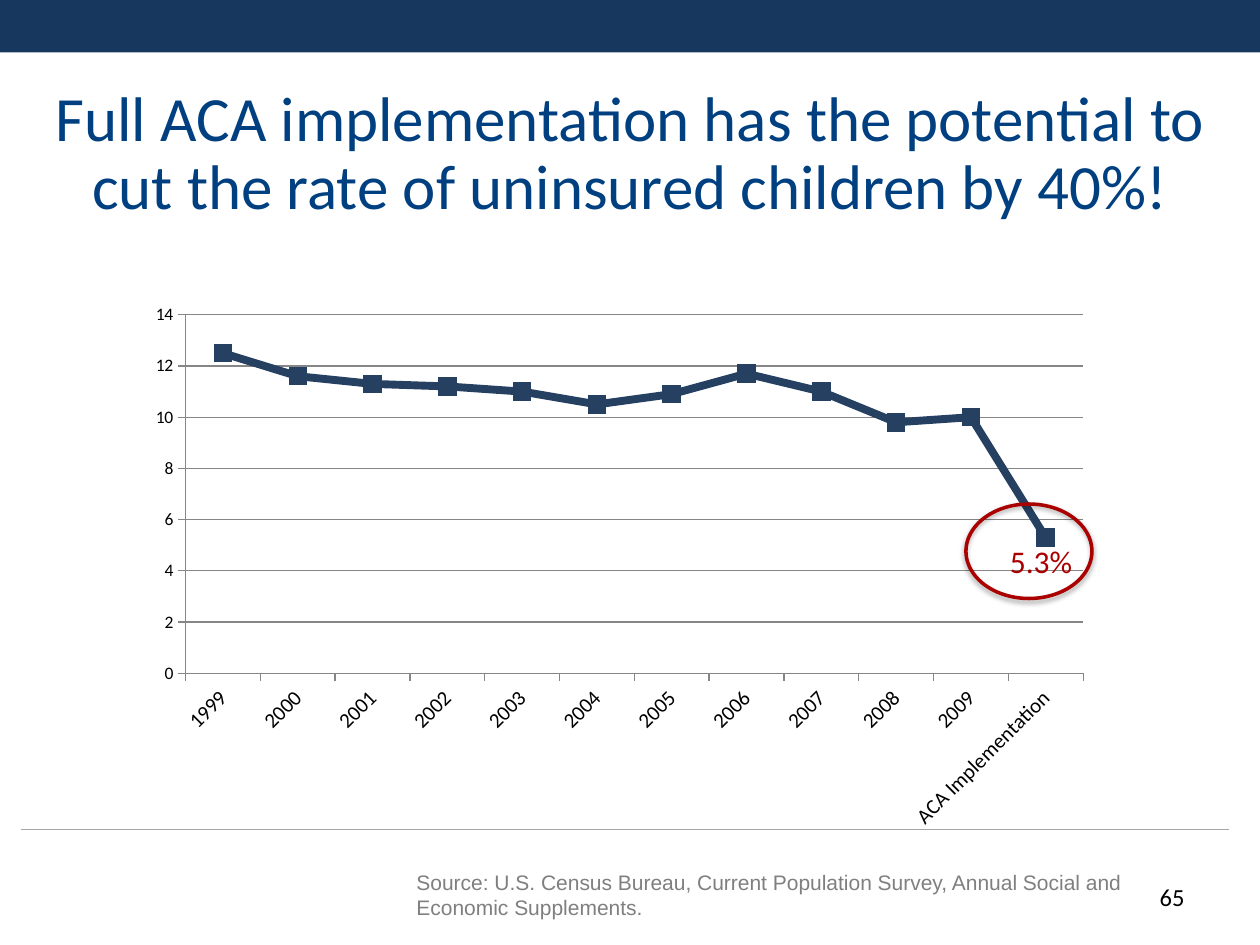
from lxml import etree
from pptx import Presentation
from pptx.chart.data import CategoryChartData
from pptx.dml.color import RGBColor
from pptx.enum.chart import XL_CHART_TYPE, XL_MARKER_STYLE, XL_TICK_MARK
from pptx.enum.shapes import MSO_CONNECTOR, MSO_SHAPE
from pptx.enum.text import MSO_ANCHOR, PP_ALIGN
from pptx.oxml import parse_xml
from pptx.oxml.ns import qn
from pptx.util import Pt

LINE_MARKERS = XL_CHART_TYPE.LINE_MARKERS
SQUARE = XL_MARKER_STYLE.SQUARE
OUTSIDE, NO_TICK = XL_TICK_MARK.OUTSIDE, XL_TICK_MARK.NONE
STRAIGHT = MSO_CONNECTOR.STRAIGHT
RECTANGLE, OVAL = MSO_SHAPE.RECTANGLE, MSO_SHAPE.OVAL
TOP, MIDDLE = MSO_ANCHOR.TOP, MSO_ANCHOR.MIDDLE
LEFT, CENTER, RIGHT = PP_ALIGN.LEFT, PP_ALIGN.CENTER, PP_ALIGN.RIGHT

# Content
TITLE = ("Full ACA implementation has the potential to cut the rate of "
         "uninsured children by 40%!")
SOURCE = ("Source: U.S. Census Bureau, Current Population Survey, "
          "Annual Social and Economic Supplements.")
CATEGORIES = [str(year) for year in range(1999, 2010)] + ["ACA Implementation"]
RATES = [12.5, 11.6, 11.3, 11.2, 11, 10.5, 10.9, 11.7, 11, 9.8, 10, 5.3]
COLORS = {"band": "17375E", "rule": "A6A6A6", "title": "004080",
          "source": "7F7F7F", "series": "254061", "axis": "868686",
          "accent": "AA0000", "text": "000000"}
SHADOW = (
    '<a:effectLst xmlns:a="http://schemas.openxmlformats.org/drawingml/2006/main">'
    '<a:outerShdw blurRad="39370" dist="22860" dir="5400000" rotWithShape="0">'
    '<a:srgbClr val="000000"><a:alpha val="35000"/></a:srgbClr>'
    '</a:outerShdw></a:effectLst>')


def color(name):
    return RGBColor.from_string(COLORS[name])


def style_line(line, name, width):
    line.color.rgb = color(name)
    line.width = Pt(width)


def add_text(page, text, place, size, color_name, font="Calibri", align=LEFT,
             anchor=TOP, insets=(7.2, 3.6), spacing=None):
    box = page.shapes.add_textbox(*map(Pt, place))
    frame = box.text_frame
    frame.word_wrap = True
    frame.vertical_anchor = anchor
    frame.margin_left = frame.margin_right = Pt(insets[0])
    frame.margin_top = frame.margin_bottom = Pt(insets[1])
    para = frame.paragraphs[0]
    para.text = text
    para.alignment = align
    if spacing:
        para.line_spacing = spacing
    para.font.name = font
    para.font.size = Pt(size)
    para.font.color.rgb = color(color_name)


def add_rate_chart(page):
    data = CategoryChartData()
    data.categories = CATEGORIES
    data.add_series("Series 1", RATES)
    place = map(Pt, (78, 168, 552, 312))
    chart = page.shapes.add_chart(LINE_MARKERS, *place, data).chart
    chart.has_legend = chart.has_title = False
    chart.font.name = "Calibri"
    chart.font.size = Pt(10)
    chart.font.color.rgb = color("text")

    # Axes
    for axis in (chart.category_axis, chart.value_axis):
        axis.major_tick_mark = OUTSIDE
        axis.minor_tick_mark = NO_TICK
        style_line(axis.format.line, "axis", 0.75)
    chart.category_axis.tick_labels.font.size = Pt(12)
    labels = chart.category_axis._element.find(qn("c:txPr"))
    labels.find(qn("a:bodyPr")).set("rot", "-2700000")
    scale = chart.value_axis
    scale.minimum_scale, scale.maximum_scale, scale.major_unit = 0, 14, 2
    scale.has_major_gridlines = True
    style_line(scale.major_gridlines.format.line, "axis", 0.75)

    # Series
    chart.plots[0].vary_by_categories = False
    series = chart.plots[0].series[0]
    series.smooth = False
    style_line(series.format.line, "series", 4.5)
    marker = series.marker
    marker.style, marker.size = SQUARE, 10
    marker.format.fill.solid()
    marker.format.fill.fore_color.rgb = color("series")
    style_line(marker.format.line, "series", 0.75)


def main():
    deck = Presentation()
    deck.slide_width, deck.slide_height = Pt(720), Pt(540)
    page = deck.slides.add_slide(deck.slide_layouts[6])

    # Top band and footer rule
    band = page.shapes.add_shape(RECTANGLE, 0, 0, Pt(720), Pt(30))
    band.shadow.inherit = False
    band.fill.solid()
    band.fill.fore_color.rgb = color("band")
    band.line.fill.background()
    rule = page.shapes.add_connector(STRAIGHT, Pt(12), Pt(474), Pt(702), Pt(474))
    style_line(rule.line, "rule", 0.75)
    etree.SubElement(rule._element.spPr, qn("a:effectLst"))

    # Title, source and chart
    add_text(page, TITLE, (0, 48, 720, 81.5), 36, "title",
             align=CENTER, anchor=MIDDLE, spacing=0.9)
    add_text(page, SOURCE, (228, 492, 448.5, 39.5), 12, "source",
             font="Arial", insets=(10, 5))
    add_rate_chart(page)

    # Highlight around the last point
    ring = page.shapes.add_shape(OVAL, Pt(552), Pt(288), Pt(72), Pt(54))
    ring.fill.background()
    style_line(ring.line, "accent", 2)
    ring._element.spPr.append(parse_xml(SHADOW))
    add_text(page, "5.3%", (570, 306, 66, 29), 18, "accent")

    # Page number
    add_text(page, "65", (516, 500.5, 168, 29), 14, "text", align=RIGHT)
    deck.save("out.pptx")


if __name__ == "__main__":
    main()
